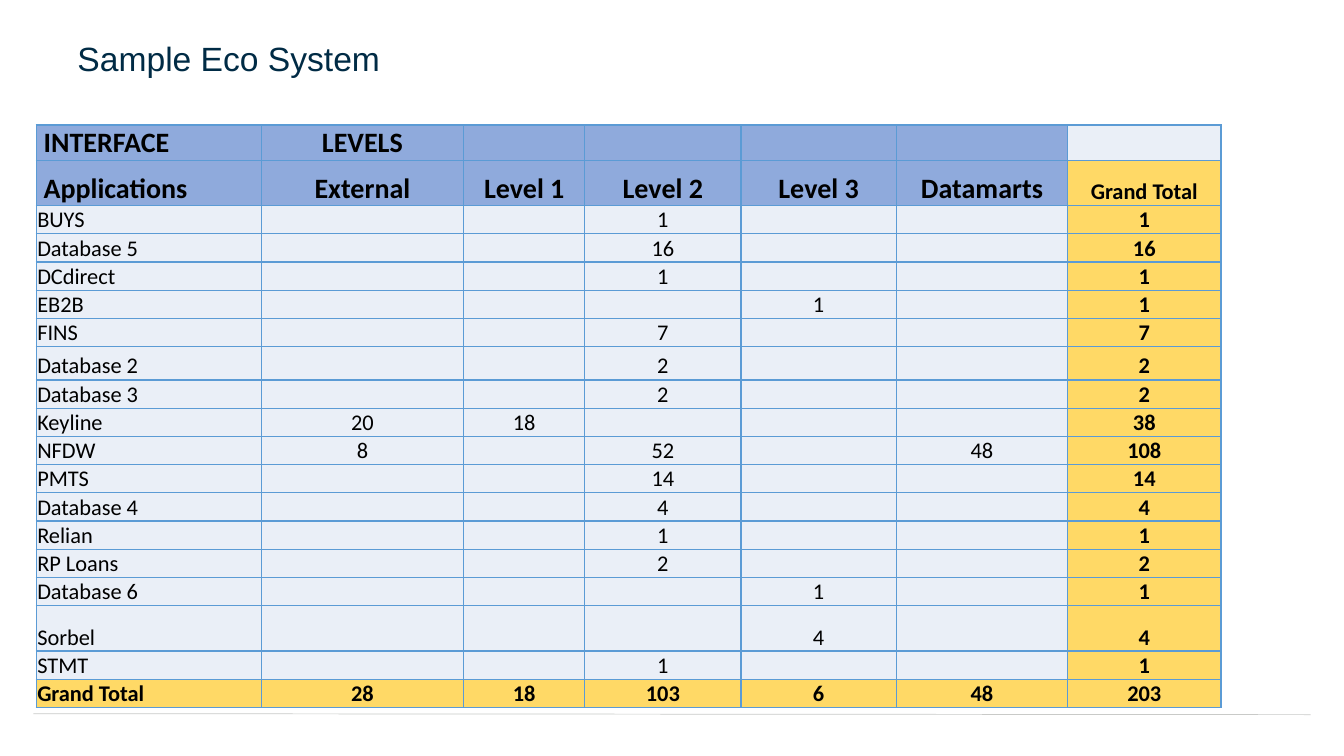
import pptx
import pptx.util
import pptx.dml.color
import pptx.enum.shapes
import pptx.enum.text
import pptx.oxml.ns
from dataclasses import dataclass
from lxml import etree

TITLE = "Sample Eco System"
BANNER = [" INTERFACE", "LEVELS", "", "", "", "", ""]
HEADINGS = [" Applications", "External", "Level 1", "Level 2", "Level 3", "Datamarts", "Grand Total"]
APPLICATIONS = [
    ("BUYS", 0, 0, 1, 0, 0),
    ("Database 5", 0, 0, 16, 0, 0),
    ("DCdirect", 0, 0, 1, 0, 0),
    ("EB2B", 0, 0, 0, 1, 0),
    ("FINS", 0, 0, 7, 0, 0),
    ("Database 2", 0, 0, 2, 0, 0),
    ("Database 3", 0, 0, 2, 0, 0),
    ("Keyline", 20, 18, 0, 0, 0),
    ("NFDW", 8, 0, 52, 0, 48),
    ("PMTS", 0, 0, 14, 0, 0),
    ("Database 4", 0, 0, 4, 0, 0),
    ("Relian", 0, 0, 1, 0, 0),
    ("RP Loans", 0, 0, 2, 0, 0),
    ("Database 6", 0, 0, 0, 1, 0),
    ("Sorbel", 0, 0, 0, 4, 0),
    ("STMT", 0, 0, 1, 0, 0),
]
COLUMN_WIDTHS = [2.23, 2.01, 1.2, 1.55, 1.54, 1.7, 1.52]
ROW_HEIGHT = 0.28
SPECIAL_HEIGHTS = {0: 0.35, 1: 0.45, 7: 0.33, 16: 0.45}


@dataclass(frozen=True)
class Theme:
    title_font: str = "Arial"
    table_font: str = "Calibri"
    title_size: int = 24
    heading_size: int = 20
    body_size: int = 16
    title: str = "002B45"
    ink: str = "000000"
    heading: str = "8FAADC"
    body: str = "EAEFF7"
    total: str = "FFD966"
    border: str = "5B9BD5"
    rule: str = "C9CAC8"


THEME = Theme()
Inches = pptx.util.Inches
Pt = pptx.util.Pt
rgb = pptx.dml.color.RGBColor.from_string
qn = pptx.oxml.ns.qn
BOTTOM = pptx.enum.text.MSO_ANCHOR.BOTTOM


def write(frame, text, *, size, font=THEME.table_font, color=THEME.ink, bold=False, centered=False, spacing=None):
    paragraph = frame.paragraphs[0]
    align = pptx.enum.text.PP_ALIGN
    paragraph.alignment = align.CENTER if centered else align.LEFT
    if spacing:
        paragraph.line_spacing = Pt(spacing)
    if not text:
        etree.SubElement(paragraph._p, qn("a:endParaRPr"), sz=str(size * 100))
        return
    run = paragraph.add_run()
    run.text = text
    run.font.name = font
    run.font.size = Pt(size)
    run.font.bold = bold
    run.font.color.rgb = rgb(color)


def outline(cell):
    properties = cell._tc.get_or_add_tcPr()
    for side in ("lnL", "lnR", "lnT", "lnB"):
        edge = etree.SubElement(properties, qn(f"a:{side}"), w=str(Pt(1)))
        fill = etree.SubElement(edge, qn("a:solidFill"))
        etree.SubElement(fill, qn("a:srgbClr"), val=THEME.border)


def table_rows():
    counts = [(name, *levels, sum(levels)) for name, *levels in APPLICATIONS]
    totals = ["Grand Total", *(sum(column) for column in list(zip(*counts))[1:])]
    body = [[str(value or "") for value in row] for row in [*counts, totals]]
    return [BANNER, HEADINGS, *body]


def add_title(slide):
    box = slide.shapes.add_textbox(Inches(0.67), Inches(0.17), Inches(12.22), Inches(0.61))
    frame = box.text_frame
    frame.word_wrap = True
    frame.vertical_anchor = BOTTOM
    frame.margin_bottom = 0
    write(frame, TITLE, size=THEME.title_size, font=THEME.title_font, color=THEME.title, spacing=26.8)


def add_rule(slide):
    rule = slide.shapes.add_connector(
        pptx.enum.shapes.MSO_CONNECTOR.STRAIGHT, Inches(0.33), Inches(7.08), Inches(13), Inches(7.09))
    rule.line.color.rgb = rgb(THEME.rule)
    rule.line.width = Pt(0.5)
    etree.SubElement(rule._element.spPr, qn("a:effectLst"))


def add_interfaces(slide):
    rows = table_rows()
    heights = [SPECIAL_HEIGHTS.get(index, ROW_HEIGHT) for index in range(len(rows))]
    table = slide.shapes.add_table(
        len(rows), len(COLUMN_WIDTHS), Inches(0.36), Inches(1.24),
        Inches(sum(COLUMN_WIDTHS)), Inches(sum(heights))).table
    table.first_row = False
    table.horz_banding = False
    for column, width in zip(table.columns, COLUMN_WIDTHS):
        column.width = Inches(width)
    last_row, last_column = len(rows) - 1, len(COLUMN_WIDTHS) - 1
    for r, values in enumerate(rows):
        table.rows[r].height = Inches(heights[r])
        for c, text in enumerate(values):
            cell = table.cell(r, c)
            heading = r < 2 and c < last_column
            total = r == last_row or (c == last_column and r > 0)
            cell.margin_left = cell.margin_right = cell.margin_top = Inches(0.01)
            cell.margin_bottom = 0
            cell.vertical_anchor = BOTTOM
            outline(cell)
            cell.fill.solid()
            cell.fill.fore_color.rgb = rgb(
                THEME.heading if heading else THEME.total if total else THEME.body)
            write(cell.text_frame, text, bold=heading or total, centered=c > 0,
                  size=THEME.heading_size if heading else THEME.body_size)


def main():
    deck = pptx.Presentation()
    deck.slide_width, deck.slide_height = Inches(13.33), Inches(7.5)
    slide = deck.slides.add_slide(deck.slide_layouts[6])
    add_rule(slide)
    add_title(slide)
    add_interfaces(slide)
    deck.save("out.pptx")


if __name__ == "__main__":
    main()
